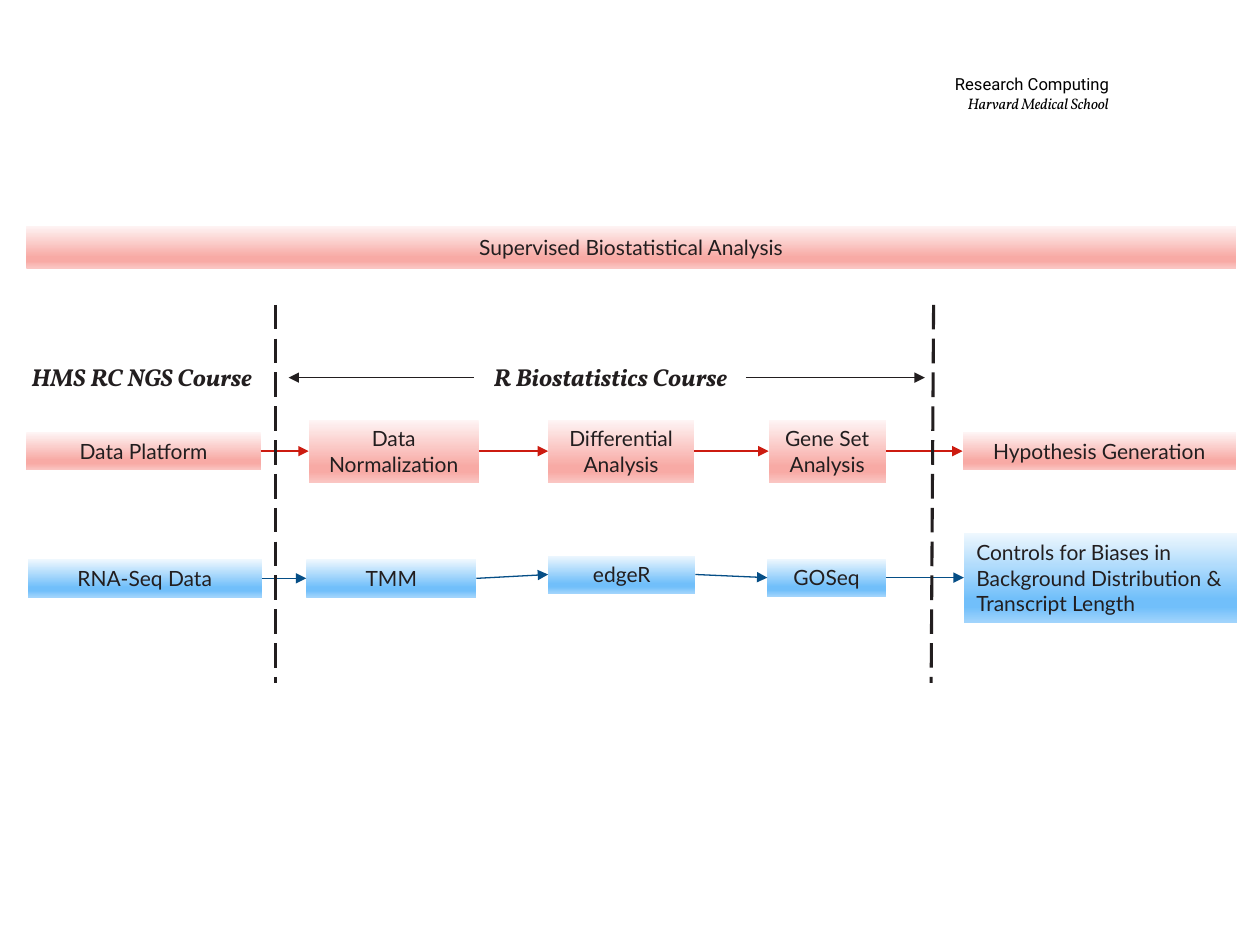
from itertools import pairwise

from lxml import etree
from pptx import Presentation
from pptx.dml.color import RGBColor
from pptx.enum import dml, shapes, text
from pptx.oxml import ns
from pptx.util import Pt

INK = RGBColor(0x22, 0x1E, 0x1F)
BLACK = RGBColor(0, 0, 0)
RED = RGBColor(0xCC, 0x1B, 0x10)
BLUE = RGBColor(0x05, 0x4E, 0x86)
RED_STOPS = [RGBColor.from_string(c) for c in ("FEF5F5", "F8AAA5", "F8AAA5", "FAC6C3")]
BLUE_STOPS = [RGBColor.from_string(c) for c in ("EFF8FE", "71BFFA", "71BFFA", "A1D4FC")]
STOP_PERCENTS = (0, 74, 83, 100)

CENTER, LEFT, RIGHT = text.PP_ALIGN.CENTER, text.PP_ALIGN.LEFT, text.PP_ALIGN.RIGHT


def write(holder, lines, align, styles):
    """Fill a shape with paragraphs, each styled as (font, size, color, bold, italic)."""
    frame = holder.text_frame
    frame.word_wrap = True
    frame.vertical_anchor = text.MSO_ANCHOR.MIDDLE
    frame.text = "\n".join(lines)
    for paragraph, (name, size, color, bold, italic) in zip(frame.paragraphs, styles):
        paragraph.alignment = align
        font = paragraph.font
        font.name, font.size, font.bold, font.italic = name, Pt(size), bold, italic
        font.color.rgb = color


def fill_gradient(fill, colors):
    """Shade a fill from top to bottom through the given colors."""
    fill.gradient()
    fill.gradient_angle = 270
    stops = fill.gradient_stops[0]._gs.getparent()
    for stop in list(stops):
        stops.remove(stop)
    for percent, color in zip(STOP_PERCENTS, colors):
        stop = etree.SubElement(stops, ns.qn("a:gs"), pos=str(percent * 1000))
        etree.SubElement(stop, ns.qn("a:srgbClr"), val=str(color))


def add_step(slide, box, lines, colors, align=CENTER):
    """Add a shaded step box at (left, top, width, height)."""
    step = slide.shapes.add_shape(shapes.MSO_SHAPE.RECTANGLE, *map(Pt, box))
    step.shadow.inherit = False
    fill_gradient(step.fill, colors)
    step.line.fill.background()
    write(step, lines, align, [("Lato", 12, INK, False, False)] * len(lines))
    return step


def add_line(slide, start, end, color, width=0.75, arrow=True, dash=None):
    """Add a straight line, with an arrowhead at its end unless told otherwise."""
    line = slide.shapes.add_connector(shapes.MSO_CONNECTOR.STRAIGHT, *map(Pt, start + end))
    line.line.color.rgb = color
    line.line.width = Pt(width)
    if dash:
        line.line.dash_style = dash
    if arrow:
        etree.SubElement(line.line._get_or_add_ln(), ns.qn("a:tailEnd"), type="triangle")
    etree.SubElement(line._element.spPr, ns.qn("a:effectLst"))
    return line


def add_label(slide, box, lines, align, styles):
    """Add a text box at (left, top, width, height)."""
    label = slide.shapes.add_textbox(*map(Pt, box))
    write(label, lines, align, styles)


def add_workflow(slide, left, middle, steps, colors, arrow_color):
    """Add a row of steps around a middle height, joined by arrows."""
    row = [
        add_step(slide, (left + x, middle + shift - height / 2, width, height),
                 lines, colors, align)
        for x, shift, width, height, lines, align in steps
    ]
    for source, target in pairwise(row):
        arrow = add_line(slide, (0, 0), (0, 0), arrow_color)
        arrow.begin_connect(source, 3)
        arrow.end_connect(target, 1)


def add_courses(slide, left, top, height):
    """Add the course dividers, labels and range arrows."""
    for upper, lower in ((157.7, 157.7), (533.5, 532.1)):
        add_line(slide, (left + upper, top), (left + lower, top + height), INK, 1.75,
                 arrow=False, dash=dml.MSO_LINE.LONG_DASH)
    style = [("Vollkorn", 14, INK, True, True)]
    for x, width, course in ((0, 162, "HMS RC NGS Course"),
                             (173.2, 351.4, "R Biostatistics Course")):
        add_label(slide, (left + x, top + 29, width, 24.5), [course], CENTER, style)
    for start, end in ((270.7, 164.9), (426.2, 528.5)):
        add_line(slide, (left + start, top + 41.6), (left + end, top + 41.6), INK)


def main():
    """Build the biostatistics workflow slide."""
    deck = Presentation()
    deck.slide_width, deck.slide_height = Pt(720), Pt(540)
    slide = deck.slides.add_slide(deck.slide_layouts[6])

    add_label(slide, (458.6, 29.5, 182.2, 47.5),
              ["Research Computing", "Harvard Medical School"], RIGHT,
              [("Roboto", 9.5, BLACK, False, False), ("Vollkorn", 8.7, BLACK, False, True)])
    add_step(slide, (15.1, 128.9, 691.2, 24.5), ["Supervised Biostatistical Analysis"], RED_STOPS)

    stages = [
        (0, 0, 133.9, 21.6, ["Data Platform"], CENTER),
        (161.3, 0, 97.2, 36, ["Data", "Normalization"], CENTER),
        (298.1, 0, 83.5, 36, ["Differential Analysis"], CENTER),
        (424.1, 0, 67, 36, ["Gene Set", "Analysis"], CENTER),
        (535, 0, 156.2, 21.6, ["Hypothesis Generation"], CENTER),
    ]
    add_workflow(slide, 15.1, 257.8, stages, RED_STOPS, RED)

    tools = [
        (0, 0, 133.9, 21.6, ["RNA-Seq Data"], CENTER),
        (159.2, 0, 97.2, 21.6, ["TMM"], CENTER),
        (297.4, -2.2, 84.2, 21.6, ["edgeR"], CENTER),
        (422.7, -0.4, 67.7, 21.6, ["GOSeq"], CENTER),
        (535, -0.4, 156.2, 51.1,
         ["Controls for Biases in Background Distribution & Transcript Length"], LEFT),
    ]
    add_workflow(slide, 15.8, 330.5, tools, BLUE_STOPS, BLUE)
    add_courses(slide, 0, 174.2, 216)

    deck.save("out.pptx")


if __name__ == "__main__":
    main()
